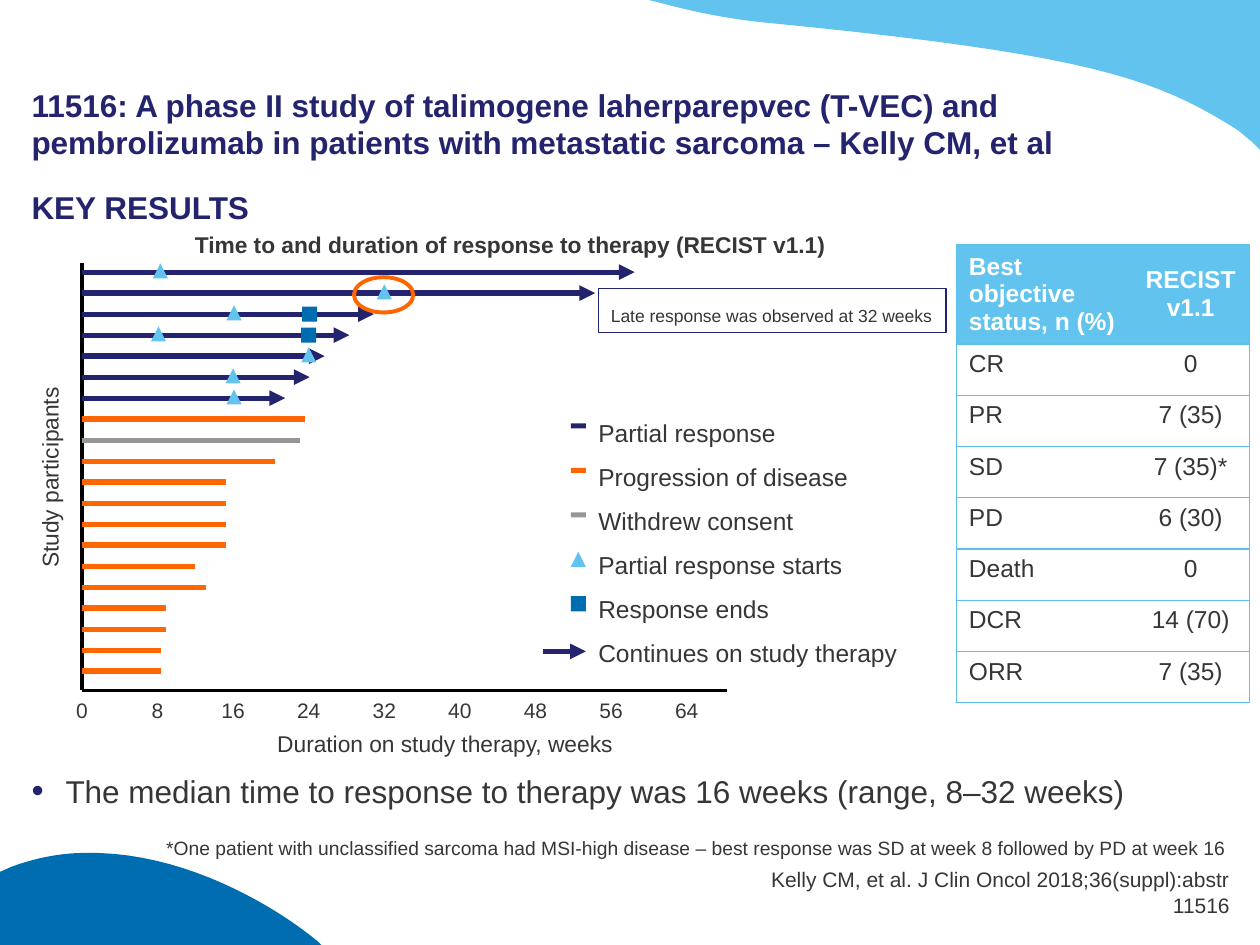
from lxml.etree import SubElement
from pptx import Presentation
from pptx.dml.color import RGBColor
from pptx.enum.shapes import MSO_CONNECTOR, MSO_SHAPE
from pptx.enum.text import MSO_ANCHOR, MSO_AUTO_SIZE, PP_ALIGN
from pptx.oxml.ns import qn
from pptx.util import Inches, Pt

rgb = RGBColor.from_string
NAVY, ORANGE, GREY, SKY, BLUE = "23246D", "FF6600", "969696", "62C4EE", "006DB0"
TEXT, BLACK, WHITE, RULE = "363636", "000000", "FFFFFF", "5CC1EC"
LEFT, CENTER, RIGHT = PP_ALIGN.LEFT, PP_ALIGN.CENTER, PP_ALIGN.RIGHT

deck = Presentation()
deck.slide_width, deck.slide_height = Inches(10), Inches(7.5)
COLUMN, ROW = deck.slide_width / 100, deck.slide_height / 75
slide = deck.slides.add_slide(deck.slide_layouts[1])


def grid(*cells):
    return [round(cell * (ROW if i % 2 else COLUMN)) for i, cell in enumerate(cells)]


def write(frame, lines, size, color=TEXT, bold=False, align=LEFT, spacing=1):
    frame.text = "\n".join(lines)
    for paragraph in frame.paragraphs:
        paragraph.alignment = align
        paragraph.line_spacing = spacing
        for run in paragraph.runs:
            run.font.name, run.font.size, run.font.bold = "Arial", Pt(size), bold
            run.font.color.rgb = rgb(color)


waves = [
    (SKY, [(51.5, 0), (100, 0), (100, 11.9), (99.3, 11.2)],
     [(98.9, 10.9, 98.6, 10.6, 98.2, 10.3), (91.7, 6.2, 86.4, 4.3, 60.8, 1.8),
      (57.7, 1.5, 54.9, 0.9, 52.3, 0.2)]),
    (BLUE, [(25.2, 74.7), (25.5, 75), (0, 75), (0, 69.2), (0.9, 68.8)],
     [(2.8, 68.1, 4.8, 67.7, 6.7, 67.7), (14.5, 67.5, 21.8, 71.9, 25.2, 74.7)]),
]
for color, outline, curves in waves:
    for x1, y1, x2, y2, x3, y3 in curves:
        x0, y0 = outline[-1]
        for step in range(1, 21):
            t = step / 20
            weights = (1 - t) ** 3, 3 * t * (1 - t) ** 2, 3 * t * t * (1 - t), t ** 3
            outline.append((sum(w * x for w, x in zip(weights, (x0, x1, x2, x3))),
                            sum(w * y for w, y in zip(weights, (y0, y1, y2, y3)))))
    builder = slide.shapes.build_freeform(*grid(*outline[0]))
    builder.add_line_segments([grid(*point) for point in outline[1:]], close=True)
    wave = builder.convert_to_shape()
    wave.shadow.inherit = False
    wave.fill.solid()
    wave.fill.fore_color.rgb = rgb(color)
    wave.line.fill.background()
    wave.element.getparent().insert(2, wave.element)

title, body = slide.placeholders[0], slide.placeholders[1]
title.left, title.top, title.width, title.height = grid(2.5, 2.5, 85.2, 10.3)
body.left, body.top, body.width, body.height = grid(2.5, 14.4, 95, 58.1)
write(title.text_frame, ["11516: A phase II study of talimogene laherparepvec (T-VEC) and "
                         "pembrolizumab in patients with metastatic sarcoma – Kelly CM, et al"],
      18, NAVY, True)
write(body.text_frame, ["KEY RESULTS", "The median time to response to therapy was 16 weeks "
                        "(range, 8–32 weeks)"], 18)
for frame in (title.text_frame, body.text_frame):
    frame.word_wrap, frame.auto_size = True, MSO_AUTO_SIZE.NONE
    frame.margin_left = frame.margin_right = 0
title.text_frame.margin_bottom = 0
title.text_frame.vertical_anchor = MSO_ANCHOR.BOTTOM
body.text_frame.vertical_anchor = MSO_ANCHOR.TOP

heading, finding = body.text_frame.paragraphs
heading.runs[0].font.bold = True
heading.runs[0].font.color.rgb = rgb(NAVY)
for paragraph, before, indent in ((heading, 0, 0), (finding, 308, Inches(0.27))):
    paragraph.space_before, paragraph.space_after = Pt(before), Pt(4)
    properties = paragraph._p.get_or_add_pPr()
    properties.set("marL", str(indent))
    properties.set("indent", str(-indent))
SubElement(heading._p.pPr, qn("a:buNone"))
SubElement(SubElement(finding._p.pPr, qn("a:buClr")), qn("a:srgbClr"), val=NAVY)
SubElement(finding._p.pPr, qn("a:buSzPct"), val="110000")
SubElement(finding._p.pPr, qn("a:buChar"), char="•")

results = [("Best objective status, n (%)", "RECIST v1.1"), ("CR", "0"), ("PR", "7 (35)"),
           ("SD", "7 (35)*"), ("PD", "6 (30)"), ("Death", "0"), ("DCR", "14 (70)"),
           ("ORR", "7 (35)")]
table = slide.shapes.add_table(len(results), 2, *grid(75.9, 19.4, 23.3, 36.4)).table
table.first_row = table.horz_banding = False
table._tbl.tblPr.find(qn("a:tableStyleId")).text = "{2D5ABB26-0587-4C30-8999-92F81FD0307C}"
for column, width in zip(table.columns, (13.9, 9.4)):
    column.width = round(width * COLUMN)
for r, values in enumerate(results):
    table.rows[r].height = round((4.07 if r else 7.9) * ROW)
    for c, value in enumerate(values):
        cell = table.cell(r, c)
        write(cell.text_frame, [value], 14, TEXT if r else WHITE, not r, CENTER if c else LEFT)
        for side in ("lnR" if c else "lnL", "lnT", "lnB"):
            border = SubElement(cell._tc.get_or_add_tcPr(), qn("a:" + side), w="9525")
            SubElement(SubElement(border, qn("a:solidFill")), qn("a:srgbClr"), val=RULE)
        if r:
            cell.fill.background()
        else:
            cell.vertical_anchor = MSO_ANCHOR.MIDDLE
            cell.fill.solid()
            cell.fill.fore_color.rgb = rgb(SKY)

AXIS, BASE, WEEK, FIRST, PITCH = 6.5, 54.8, 0.75, 21.6, 10 / 6
labels = [
    ((12.2, 65.9, 87.1, 2.9), ["*One patient with unclassified sarcoma had MSI-high disease – best "
                               "response was SD at week 8 followed by PD at week 16"], 11, LEFT, 1),
    ((4.5, 17.8, 71.9, 3.2), ["Time to and duration of response to therapy (RECIST v1.1)"],
     13, CENTER, 1),
    ((-4.3, 36.3, 16.5, 3.2), ["Study participants"], 13, CENTER, 1),
    ((20.8, 57.4, 29, 3.2), ["Duration on study therapy, weeks"], 13, CENTER, 1),
    ((46.5, 31.5, 25.8, 22.2), ["Partial response", "Progression of disease", "Withdrew consent",
                                "Partial response starts", "Response ends",
                                "Continues on study therapy"], 14, LEFT, 1.5),
    ((56.3, 70.8, 41.3, 2), ["Kelly CM, et al. J Clin Oncol 2018;36(suppl):abstr 11516"],
     12, RIGHT, 1),
]
labels += [((AXIS + week * WEEK - 1.95, 54.9, 3.9, 3), [str(week)], 12, CENTER, 1)
           for week in range(0, 65, 8)]
for place, lines, size, align, spacing in labels:
    label = slide.shapes.add_textbox(*grid(*place))
    write(label.text_frame, lines, size, align=align, spacing=spacing)
    label.text_frame.word_wrap = False
    if lines[0].startswith("Time to"):
        label.text_frame.paragraphs[0].runs[0].font.bold = True
    if lines[0] == "Study participants":
        label.rotation = 270
    if align == RIGHT:
        frame = label.text_frame
        frame.word_wrap, frame.vertical_anchor = True, MSO_ANCHOR.BOTTOM
        frame.margin_left = frame.margin_right = frame.margin_top = frame.margin_bottom = 0

durations = [58.5, 54.3, 30.9, 28.3, 25.7, 24.1, 21.5, 23.6, 23.1, 20.4, 15.2, 15.2, 15.2, 15.2,
             12, 13.1, 8.9, 8.9, 8.4, 8.4]
RESPONDERS, WITHDRAWN = 7, 8
lines = [((AXIS, 20.9, AXIS, BASE), BLACK, 2, False), ((AXIS, BASE, 57.7, BASE), BLACK, 2, False),
         ((43.1, 51.7, 46.5, 51.7), NAVY, 3, True)]
for i, weeks in enumerate(durations):
    y = FIRST + i * PITCH
    color = NAVY if i < RESPONDERS else GREY if i == WITHDRAWN else ORANGE
    lines.append(((AXIS, y, AXIS + weeks * WEEK, y), color, 3, i < RESPONDERS))
for ends, color, width, arrow in lines:
    line = slide.shapes.add_connector(MSO_CONNECTOR.STRAIGHT, *grid(*ends))
    line.line.color.rgb = rgb(color)
    line.line.width = Pt(width)
    if arrow:
        SubElement(line.element.spPr.find(qn("a:ln")), qn("a:tailEnd"), type="triangle")
    SubElement(line.element.spPr, qn("a:effectLst"))

starts = [8.3, 32, 16.1, 8.1, 24, 16, 16.1]
ends = {2: 24.1, 3: 24}
TRIANGLE, SQUARE = MSO_SHAPE.ISOSCELES_TRIANGLE, MSO_SHAPE.RECTANGLE
marks = [(TRIANGLE, AXIS + week * WEEK, FIRST + i * PITCH - 0.1, 1.2, SKY)
         for i, week in enumerate(starts)]
marks += [(SQUARE, AXIS + week * WEEK, FIRST + i * PITCH, 1.2, BLUE) for i, week in ends.items()]
key = [(SQUARE, 0.4, NAVY), (SQUARE, 0.4, ORANGE), (SQUARE, 0.4, GREY), (TRIANGLE, 1.2, SKY),
       (SQUARE, 1.2, BLUE)]
marks += [(preset, 45.9, 33.8 + i * 3.53, height, color)
          for i, (preset, height, color) in enumerate(key)]
for preset, x, y, height, color in marks:
    mark = slide.shapes.add_shape(preset, *grid(x - 0.6, y - height / 2, 1.2, height))
    mark.shadow.inherit = False
    mark.fill.solid()
    mark.fill.fore_color.rgb = rgb(color)
    mark.line.fill.background()

late_ring = slide.shapes.add_shape(MSO_SHAPE.OVAL, *grid(28.1, 22, 4.7, 2.8))
late_note = slide.shapes.add_shape(SQUARE, *grid(47.5, 22.9, 27.6, 3.5))
for outline, color, width in ((late_ring, ORANGE, 2.25), (late_note, NAVY, 0.75)):
    outline.shadow.inherit = False
    outline.fill.background()
    outline.line.color.rgb = rgb(color)
    outline.line.width = Pt(width)
write(late_note.text_frame, ["Late response was observed at 32 weeks"], 10, spacing=1.5)
late_note.text_frame.word_wrap = False
late_note.text_frame.vertical_anchor = MSO_ANCHOR.TOP

deck.save("out.pptx")
